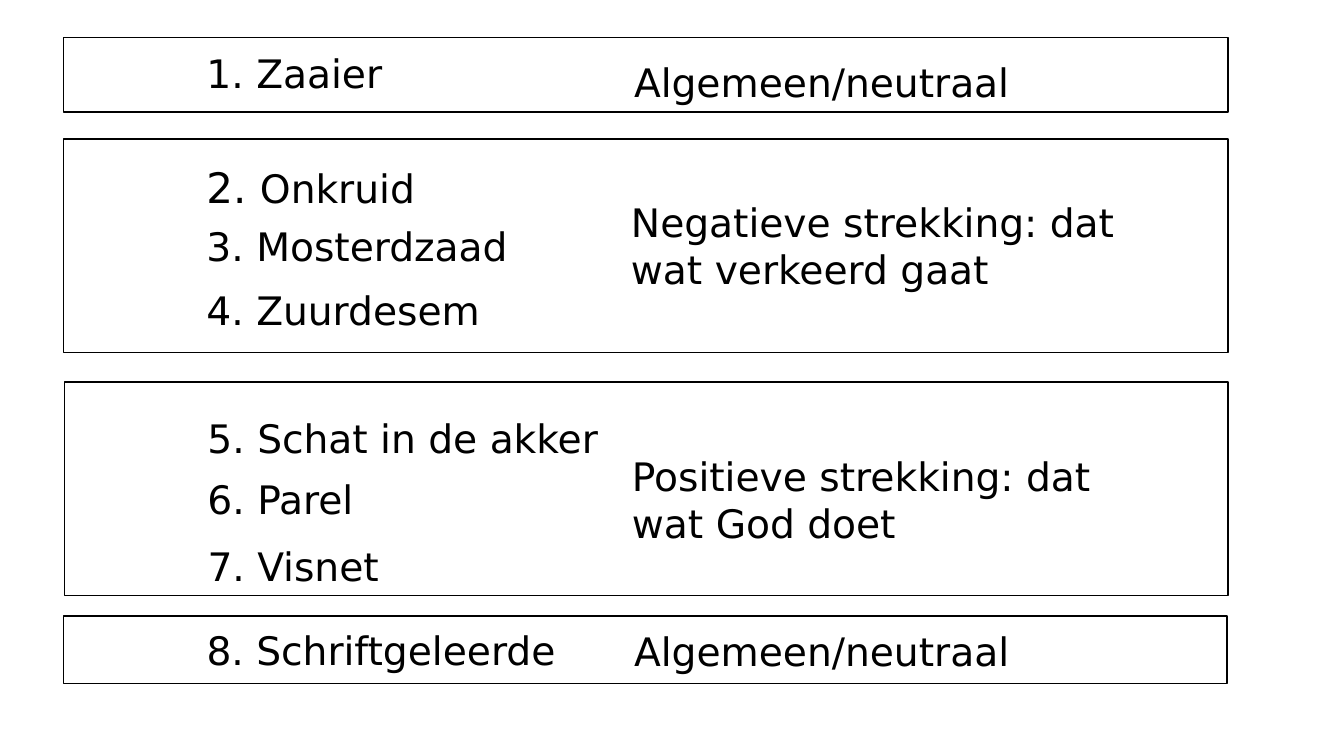
from pptx import Presentation
from pptx.dml.color import RGBColor
from pptx.enum.shapes import MSO_SHAPE
from pptx.enum.text import MSO_AUTO_SIZE
from pptx.util import Inches, Pt

FONT = "DejaVu Sans"
BLACK = "000000"
ITEM_X = 1.32  # offset of the parables from the frame's left edge

# Frame box, parables (top offset, width, number, name),
# strekking (left offset, top offset, width, height, text)
GROUPS = [
    ((0.63, 0.37, 11.55, 0.74),
     [(0.07, 1.97, "1. ", "Zaaier")],
     (5.56, 0.16, 6.63, 0.57, "Algemeen/neutraal")),
    ((0.63, 1.38, 11.55, 2.12),
     [(0.17, 2.33, "2. ", "Onkruid"),
      (0.78, 3.23, "3. ", "Mosterdzaad"),
      (1.41, 2.96, "4. ", "Zuurdesem")],
     (5.53, 0.54, 5.59, 1.04, "Negatieve strekking: dat wat verkeerd gaat")),
    ((0.64, 3.79, 11.54, 2.12),
     [(0.27, 4.2, "5. ", "Schat in de akker"),
      (0.88, 1.7, "6. ", "Parel"),
      (1.54, 1.95, "7. ", "Visnet")],
     (5.53, 0.65, 4.97, 1.04, "Positieve strekking: dat wat God doet")),
    ((0.63, 6.11, 11.54, 0.67),
     [(0.05, 3.72, "8. ", "Schriftgeleerde")],
     (5.56, 0.06, 5.29, 0.57, "Algemeen/neutraal")),
]


def color(value):
    return RGBColor.from_string(value)


def add_text(slide, x, y, w, h, runs, wrap):
    """Place a one-paragraph text box and return its runs."""
    tf = slide.shapes.add_textbox(Inches(x), Inches(y), Inches(w), Inches(h)).text_frame
    tf.word_wrap = wrap
    tf.auto_size = MSO_AUTO_SIZE.SHAPE_TO_FIT_TEXT
    p = tf.paragraphs[0]
    p.font.name = FONT
    p.font.size = Pt(28)
    p.font.color.rgb = color(BLACK)
    for text in runs:
        p.add_run().text = text
    return p.runs


def add_group(slide, box, parables, strekking):
    x, y, w, h = box

    # Frame
    sp = slide.shapes.add_shape(MSO_SHAPE.RECTANGLE, Inches(x), Inches(y), Inches(w), Inches(h))
    sp.shadow.inherit = False
    sp.fill.background()
    sp.line.color.rgb = color(BLACK)
    sp.line.width = Pt(1)

    # Numbered parables
    for dy, width, number, name in parables:
        if number == "2. ":  # this number is slightly larger than its name
            r = add_text(slide, x + ITEM_X, y + dy, width, 0.61, [number, name], False)[0]
            r.font.size = Pt(30)
        else:
            add_text(slide, x + ITEM_X, y + dy, width, 0.57, [number + name], False)

    # Strekking of the group
    dx, dy, width, height, text = strekking
    add_text(slide, x + dx, y + dy, width, height, [text], True)


def main():
    prs = Presentation()
    prs.slide_width, prs.slide_height = Inches(13.33), Inches(7.5)
    slide = prs.slides.add_slide(prs.slide_layouts[6])
    for box, parables, strekking in GROUPS:
        add_group(slide, box, parables, strekking)
    prs.save("out.pptx")


if __name__ == "__main__":
    main()
